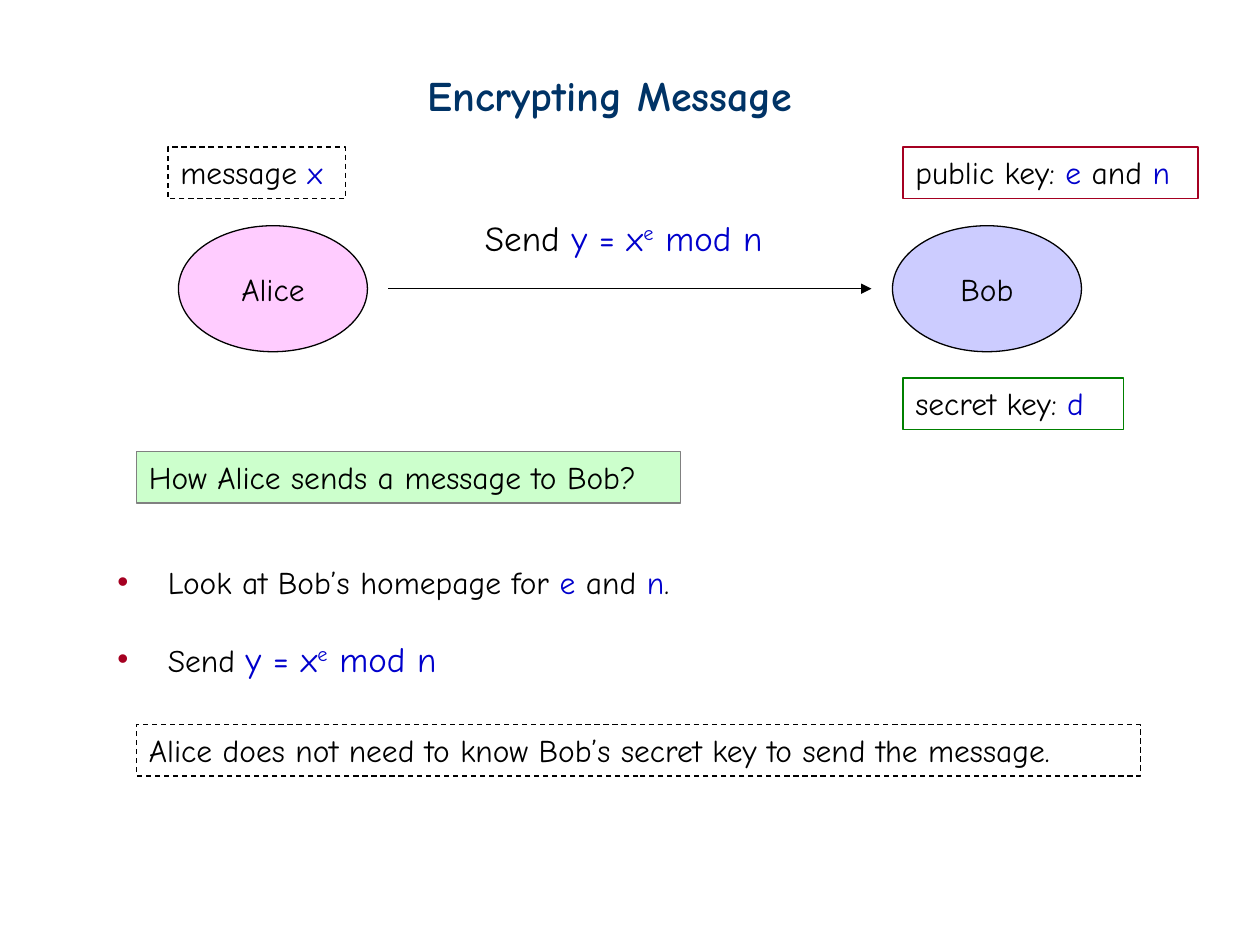
from dataclasses import dataclass

from lxml.etree import SubElement
from pptx import Presentation
from pptx.dml.color import RGBColor
from pptx.enum.dml import MSO_LINE_DASH_STYLE as Dash
from pptx.enum.shapes import MSO_CONNECTOR as Connector, MSO_SHAPE as Shape
from pptx.enum.text import MSO_ANCHOR as Anchor, PP_ALIGN as Align
from pptx.oxml.ns import qn
from pptx.util import Inches, Pt


@dataclass(frozen=True)
class Theme:
    font: str = "Comic Neue"
    title: str = "003366"
    ink: str = "000000"
    math: str = "0000CC"
    bullet: str = "A50021"
    public: str = "A50021"
    secret: str = "008000"
    alice: str = "FFCCFF"
    bob: str = "CCCCFF"
    question: str = "CCFFCC"
    question_edge: str = "808080"
    title_size: float = 24
    formula_size: float = 20
    body_size: float = 18
    line_width: float = 0.75


@dataclass(frozen=True)
class Box:
    """An area in grid units: the slide has 120 columns and 90 rows."""
    left: float
    top: float
    width: float
    height: float

    def inner(self, column, row, width, height):
        return Box(self.left + column, self.top + row, width, height)

    def place(self):
        return [grid(v) for v in (self.left, self.top, self.width, self.height)]


THEME = Theme()
SLIDE_WIDTH, SLIDE_HEIGHT = Inches(10), Inches(7.5)
COLUMNS = 120
LABEL_ROWS = 4.9


def grid(units):
    return round(units * SLIDE_WIDTH / COLUMNS)


def color(value):
    return RGBColor.from_string(value)


# Text: a run is (text, colour, raised)
def plain(text):
    return text, THEME.ink, False


def math(text, raised=False):
    return text, THEME.math, raised


FORMULA = [math("y = x"), math("e", raised=True), math(" mod n")]


def add_runs(paragraph, runs, size=THEME.body_size, bold=False):
    for text, run_color, raised in runs:
        run = paragraph.add_run()
        run.text = text
        run.font.name = THEME.font
        run.font.size = Pt(size)
        run.font.bold = bold
        run.font.color.rgb = color(run_color)
        if raised:
            run.font._element.set("baseline", "30000")


def add_bullet(paragraph):
    properties = paragraph._p.get_or_add_pPr()
    indent = Inches(0.4)
    properties.set("marL", str(indent))
    properties.set("indent", str(-indent))
    bullet_color = SubElement(properties, qn("a:buClr"))
    SubElement(bullet_color, qn("a:srgbClr")).set("val", THEME.bullet)
    SubElement(properties, qn("a:buFont")).set("typeface", "Arial")
    SubElement(properties, qn("a:buChar")).set("char", "•")


# Parts
def add_text(slide, box, runs, size=THEME.body_size):
    frame = slide.shapes.add_textbox(*box.place()).text_frame
    frame.word_wrap = True
    add_runs(frame.paragraphs[0], runs, size)
    return frame


def add_figure(slide, kind, box, runs, fill=None, edge=THEME.ink):
    shape = slide.shapes.add_shape(kind, *box.place())
    shape.shadow.inherit = False
    if fill:
        shape.fill.solid()
        shape.fill.fore_color.rgb = color(fill)
    else:
        shape.fill.background()
    shape.line.color.rgb = color(edge)
    shape.line.width = Pt(THEME.line_width)
    add_runs(shape.text_frame.paragraphs[0], runs)
    return shape


def add_label(slide, box, runs, fill=None, edge=THEME.ink, dashed=False):
    shape = add_figure(slide, Shape.RECTANGLE, box, runs, fill, edge)
    shape.text_frame.vertical_anchor = Anchor.TOP
    shape.text_frame.paragraphs[0].alignment = Align.LEFT
    if dashed:
        shape.line.dash_style = Dash.DASH


def add_person(slide, box, name, fill):
    frame = add_figure(slide, Shape.OVAL, box, [plain(name)], fill).text_frame
    frame.word_wrap = False
    frame.vertical_anchor = Anchor.MIDDLE
    frame.paragraphs[0].alignment = Align.CENTER


def add_arrow(slide, left, right, row):
    arrow = slide.shapes.add_connector(
        Connector.STRAIGHT, grid(left), grid(row), grid(right), grid(row))
    arrow.line.color.rgb = color(THEME.ink)
    arrow.line.width = Pt(THEME.line_width)
    SubElement(arrow.line._get_or_add_ln(), qn("a:tailEnd")).set("type", "triangle")
    SubElement(arrow._element.spPr, qn("a:effectLst"))


# Regions
def fill_title(slide, box):
    title = slide.shapes.title
    title.left, title.top, title.width, title.height = box.place()
    frame = title.text_frame
    frame.word_wrap = True
    frame.vertical_anchor = Anchor.TOP
    frame.paragraphs[0].alignment = Align.LEFT
    add_runs(frame.paragraphs[0], [("Encrypting Message", THEME.title, False)],
             THEME.title_size, bold=True)


def draw_exchange(slide, box):
    person_width, person_height, person_row, gap = 18, 12, 7.5, 2
    alice, bob = 1, 69
    for column, name, fill in ((alice, "Alice", THEME.alice), (bob, "Bob", THEME.bob)):
        add_person(slide, box.inner(column, person_row, person_width, person_height),
                   name, fill)
    add_arrow(slide, box.left + alice + person_width + gap, box.left + bob - gap,
              box.top + person_row + person_height / 2)
    add_text(slide, box.inner(29, 6, 29.9, 5.2), [plain("Send "), *FORMULA],
             THEME.formula_size)

    # What each side holds
    add_label(slide, box.inner(0, 0, 16.9, LABEL_ROWS),
              [plain("message "), math("x")], dashed=True)
    add_label(slide, box.inner(bob + 1, 0, 28.1, LABEL_ROWS),
              [plain("public key: "), math("e"), plain(" and "), math("n")],
              edge=THEME.public)
    add_label(slide, box.inner(bob + 1, 22, 21, LABEL_ROWS),
              [plain("secret key: "), math("d")], edge=THEME.secret)


def write_explanation(slide, box):
    add_label(slide, box.inner(3, 0, 51.8, LABEL_ROWS),
              [plain("How Alice sends a message to Bob?")],
              THEME.question, THEME.question_edge)

    # Steps
    frame = add_text(slide, box.inner(0, 10, 55.3, 12.4),
                     [plain("Look at Bob’s homepage for "), math("e"),
                      plain(" and "), math("n"), plain(".")])
    send = frame.add_paragraph()
    send.space_before = Pt(21)
    add_runs(send, [plain("Send ")])
    add_runs(send, FORMULA, THEME.formula_size)
    for paragraph in frame.paragraphs:
        add_bullet(paragraph)

    # Conclusion
    add_label(slide, box.inner(3, 26, 95.6, LABEL_ROWS),
              [plain("Alice does not need to know Bob’s secret key to send the message.")],
              dashed=True)


def main():
    presentation = Presentation()
    presentation.slide_width, presentation.slide_height = SLIDE_WIDTH, SLIDE_HEIGHT
    slide = presentation.slides.add_slide(presentation.slide_layouts[5])
    fill_title(slide, Box(39.5, 6, 40.6, 6))
    draw_exchange(slide, Box(16, 14, 98.1, 26.9))
    write_explanation(slide, Box(10, 43, 98.6, 30.9))
    presentation.save("out.pptx")


if __name__ == "__main__":
    main()
